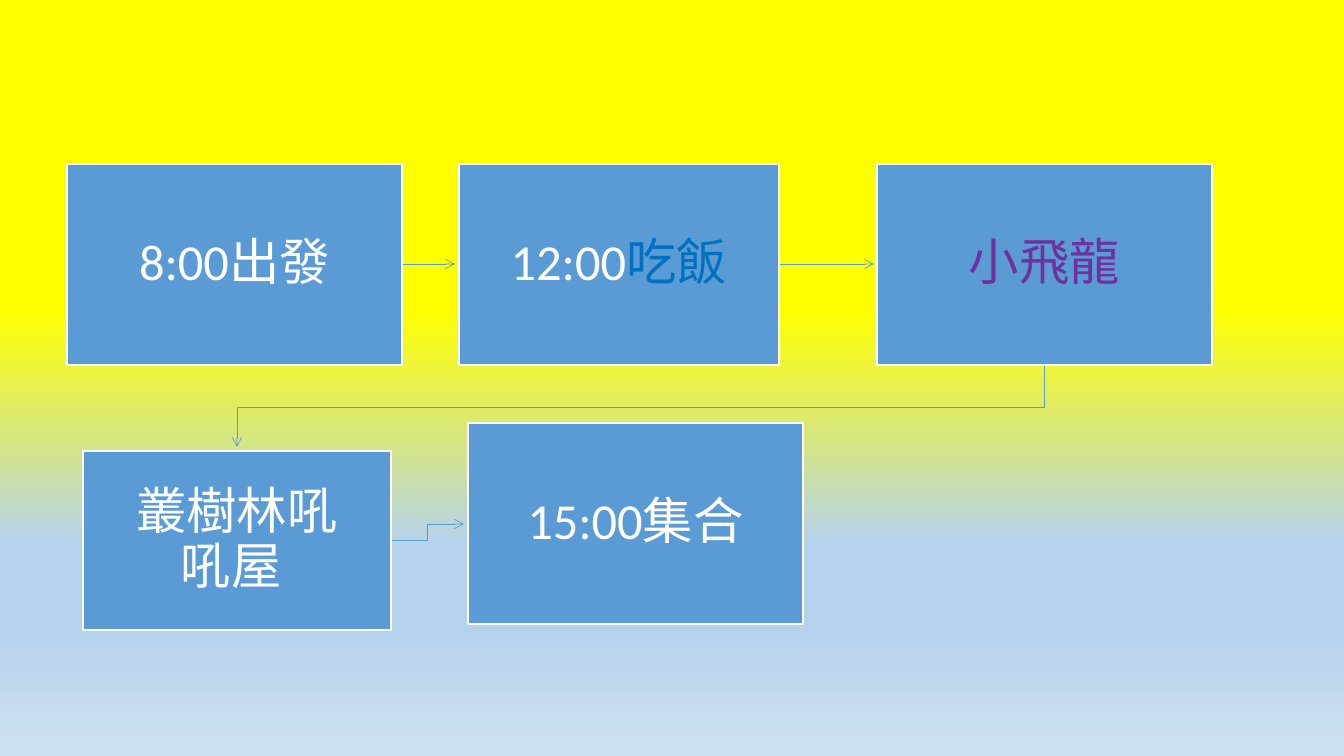
from dataclasses import dataclass

from lxml.etree import SubElement
from pptx import Presentation
from pptx.dml.color import RGBColor as RGB
from pptx.enum.shapes import MSO_CONNECTOR as LINK, MSO_SHAPE as SHAPE
from pptx.enum.text import MSO_ANCHOR as ANCHOR, PP_ALIGN as ALIGN
from pptx.oxml.ns import qn
from pptx.util import Emu, Pt

PX = 914400 / 100.8


def px(length):
    return Emu(round(length * PX))


@dataclass(frozen=True)
class Theme:
    font: str = "Calibri"
    size: int = 36
    blue: str = "5B9BD5"
    white: str = "FFFFFF"
    meal: str = "0070C0"
    dragon: str = "7030A0"
    sky: tuple = ((41, "FFFF00"), (72, "B5D2EC"), (83, "B5D2EC"), (100, "CEE1F2"))
    border: float = 1
    thread: float = 0.5
    inset: int = 28


def write(paragraph, text, *, font, size, color):
    run = paragraph.add_run()
    run.text = text
    run.font.name = font
    run.font.size = Pt(size)
    run.font.color.rgb = RGB.from_string(color)


class Itinerary:
    def __init__(self, deck, theme):
        self.theme = theme
        self.slide = deck.slides.add_slide(deck.slide_layouts[6])

    def background(self):
        fill = self.slide.background.fill
        fill.gradient()
        fill.gradient_angle = 270
        stops = next(self.slide.element.iter(qn("a:gsLst")))
        for stop in list(stops):
            stops.remove(stop)
        for percent, color in self.theme.sky:
            stop = SubElement(stops, qn("a:gs"), pos=str(percent * 1000))
            SubElement(stop, qn("a:srgbClr"), val=color)

    def stop(self, left, top, width, height, *parts):
        theme = self.theme
        card = self.slide.shapes.add_shape(
            SHAPE.RECTANGLE, px(left), px(top), px(width), px(height))
        card.shadow.inherit = False
        card.fill.solid()
        card.fill.fore_color.rgb = RGB.from_string(theme.blue)
        card.line.color.rgb = RGB.from_string(theme.white)
        card.line.width = Pt(theme.border)
        frame = card.text_frame
        frame.word_wrap = True
        frame.vertical_anchor = ANCHOR.MIDDLE
        frame.margin_left = frame.margin_right = px(theme.inset)
        frame.margin_top = frame.margin_bottom = px(theme.inset)
        label = frame.paragraphs[0]
        label.alignment = ALIGN.CENTER
        label.line_spacing = 0.9
        for text, color in parts:
            write(label, text, font=theme.font, size=theme.size, color=color)

    def arrow(self, start, end, kind=LINK.STRAIGHT):
        link = self.slide.shapes.add_connector(kind, *map(px, start + end))
        self.style_arrow(link)
        SubElement(link.element.spPr, qn("a:effectLst"))

    def bent_arrow(self, start, *bends):
        builder = self.slide.shapes.build_freeform(*start, scale=PX)
        builder.add_line_segments(bends, close=False)
        route = builder.convert_to_shape()
        route.fill.background()
        self.style_arrow(route)
        route.shadow.inherit = False

    def style_arrow(self, route):
        route.line.color.rgb = RGB.from_string(self.theme.blue)
        route.line.width = Pt(self.theme.thread)
        SubElement(route.element.spPr.find(qn("a:ln")), qn("a:tailEnd"), type="arrow")


def main():
    deck = Presentation()
    deck.slide_width, deck.slide_height = px(1344), px(756)
    theme = Theme()
    day = Itinerary(deck, theme)
    day.background()

    day.arrow((401, 264), (455, 264))
    day.arrow((779, 264), (874, 264))
    day.bent_arrow((1044, 365), (1044, 407), (237, 407), (237, 447))
    day.arrow((391, 540), (464, 524), LINK.ELBOW)

    day.stop(67, 164, 335, 201, ("8:00出發", theme.white))
    day.stop(459, 164, 320, 201, ("12:00", theme.white), ("吃飯", theme.meal))
    day.stop(877, 164, 335, 201, ("小飛龍", theme.dragon))
    day.stop(83, 451, 308, 179, ("叢樹林吼吼屋 ", theme.white))
    day.stop(468, 423, 335, 201, ("15:00集合", theme.white))
    deck.save("out.pptx")


if __name__ == "__main__":
    main()
